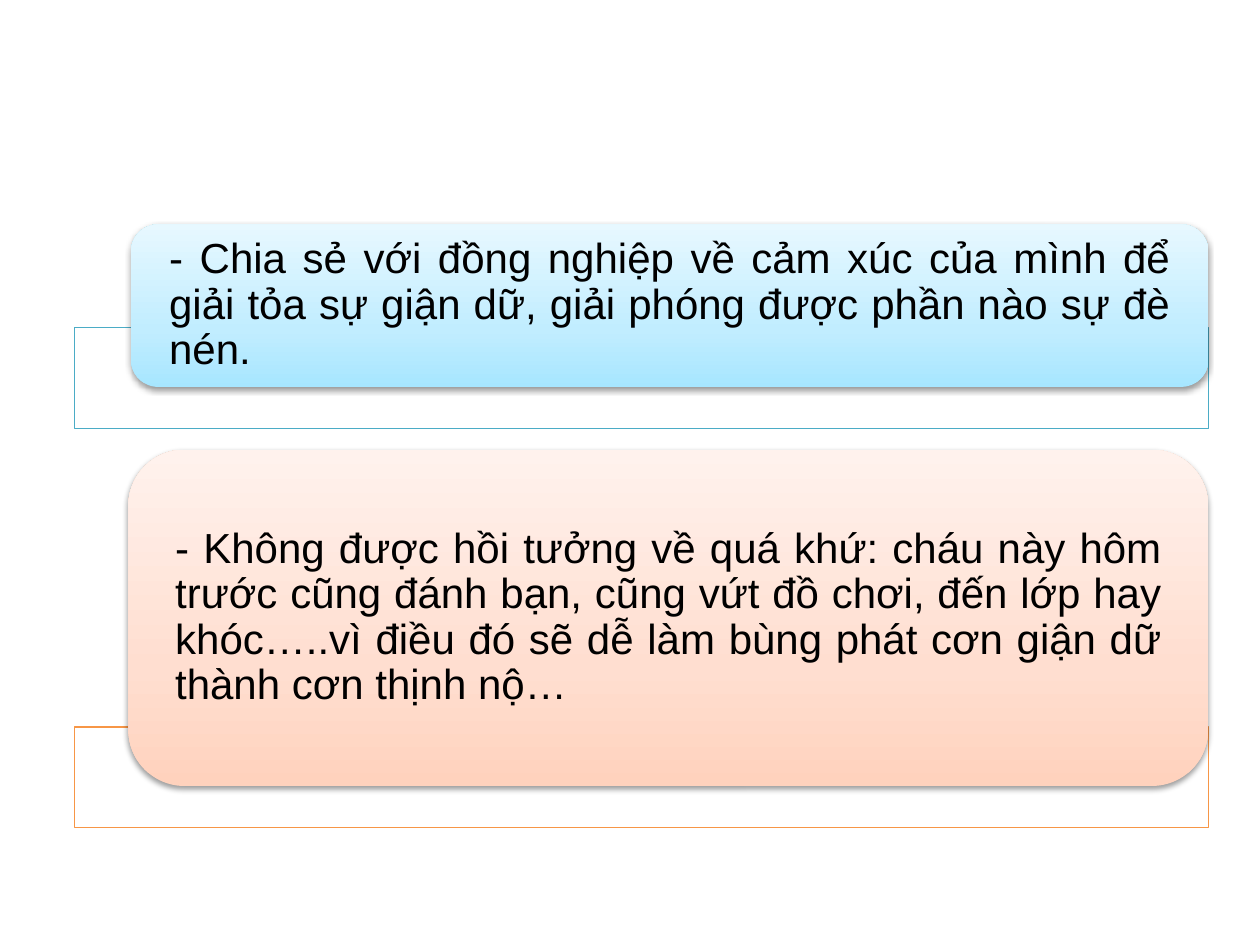
from lxml.etree import SubElement
from pptx import Presentation
from pptx.dml.color import RGBColor
from pptx.enum.shapes import MSO_SHAPE as SHAPE
from pptx.enum.text import MSO_ANCHOR as ANCHOR, PP_ALIGN as ALIGN
from pptx.oxml.ns import qn
from pptx.util import Pt

BLACK = RGBColor(0x00, 0x00, 0x00)
WHITE = RGBColor(0xFF, 0xFF, 0xFF)
TEAL = RGBColor(0x4B, 0xAC, 0xC6)
ORANGE = RGBColor(0xF7, 0x96, 0x46)
BLUES = (RGBColor(0xA7, 0xE6, 0xFF), RGBColor(0xC1, 0xED, 0xFF), RGBColor(0xE7, 0xF8, 0xFF))
PEACHES = (RGBColor(0xFF, 0xD2, 0xBD), RGBColor(0xFF, 0xDE, 0xD0), RGBColor(0xFF, 0xF2, 0xED))
STOPS = (0, 35, 100)

# frame line, frame top, panel colours, panel box, text inset from panel, text
ITEMS = [
    (TEAL, 187.2, BLUES, (74.9, 128.2, 615.6, 92.9), 4.5,
     "- Chia sẻ với đồng nghiệp về cảm xúc của mình để giải tỏa sự giận dữ, "
     "giải phóng được phần nào sự đè nén."),
    (ORANGE, 415.4, PEACHES, (73.4, 257, 617, 192.2), 9.4,
     "- Không được hồi tưởng về quá khứ: cháu này hôm trước cũng đánh bạn, "
     "cũng vứt đồ chơi, đến lớp hay khóc…..vì điều đó sẽ dễ làm bùng phát "
     "cơn giận dữ thành cơn thịnh nộ…"),
]


def add_node(parent, tag, **attrs):
    return SubElement(parent, qn(tag), {k: str(v) for k, v in attrs.items()})


class SlideBuilder:
    frame_format = dict(left=42.5, width=648, height=57.6)
    body_format = dict(word_wrap=True, vertical_anchor=ANCHOR.MIDDLE,
                       margin_left=Pt(17.3), margin_right=Pt(17.3),
                       margin_top=0, margin_bottom=0)
    para_format = dict(alignment=ALIGN.JUSTIFY, line_spacing=0.9)
    font_format = dict(name="Arial", size=Pt(24))

    def __init__(self, prs):
        self.s = prs.slides.add_slide(prs.slide_layouts[6])

    def shape(self, kind, *box):
        sp = self.s.shapes.add_shape(kind, *map(Pt, box))
        sp.shadow.inherit = False
        return sp

    def frame(self, top, color):
        f = self.frame_format
        sp = self.shape(SHAPE.RECTANGLE, f["left"], top, f["width"], f["height"])
        sp.fill.solid()
        sp.fill.fore_color.rgb = WHITE
        clr = sp._element.spPr.find(qn("a:solidFill"))[0]
        add_node(clr, "a:alpha", val=90000)
        sp.line.color.rgb = color
        sp.line.width = Pt(0.75)

    def panel(self, box, colors):
        """Rounded panel with a bottom-to-top gradient and a soft shadow."""
        sp = self.shape(SHAPE.ROUNDED_RECTANGLE, *box)
        sp.line.fill.background()
        sp.fill.gradient()
        sp.fill.gradient_angle = 90
        spPr = sp._element.spPr
        stops = spPr.find(qn("a:gradFill")).find(qn("a:gsLst"))
        for old in list(stops):
            stops.remove(old)
        for pos, color in zip(STOPS, colors):
            gs = add_node(stops, "a:gs", pos=pos * 1000)
            add_node(gs, "a:srgbClr", val=color)
        shadow = add_node(spPr.find(qn("a:effectLst")), "a:outerShdw",
                          blurRad=Pt(3.1), dist=Pt(1.6), dir=5400000, rotWithShape=0)
        clr = add_node(shadow, "a:srgbClr", val=BLACK)
        add_node(clr, "a:alpha", val=38000)

    def text(self, box, inset, words):
        x, y, w, h = box
        area = (x + inset, y + inset, w - 2 * inset, h - 2 * inset)
        tf = self.s.shapes.add_textbox(*map(Pt, area)).text_frame
        p = tf.paragraphs[0]
        r = p.add_run()
        r.text = words
        for target, values in ((tf, self.body_format), (p, self.para_format),
                               (r.font, self.font_format)):
            for name, value in values.items():
                setattr(target, name, value)
        r.font.color.rgb = BLACK
        space = add_node(p._p.get_or_add_pPr(), "a:spcAft")
        add_node(space, "a:spcPct", val=35000)


def main():
    prs = Presentation()
    prs.slide_width, prs.slide_height = Pt(720), Pt(540)
    slide = SlideBuilder(prs)
    for line, top, colors, box, inset, words in ITEMS:
        slide.frame(top, line)
        slide.panel(box, colors)
        slide.text(box, inset, words)
    prs.save("out.pptx")


if __name__ == "__main__":
    main()
